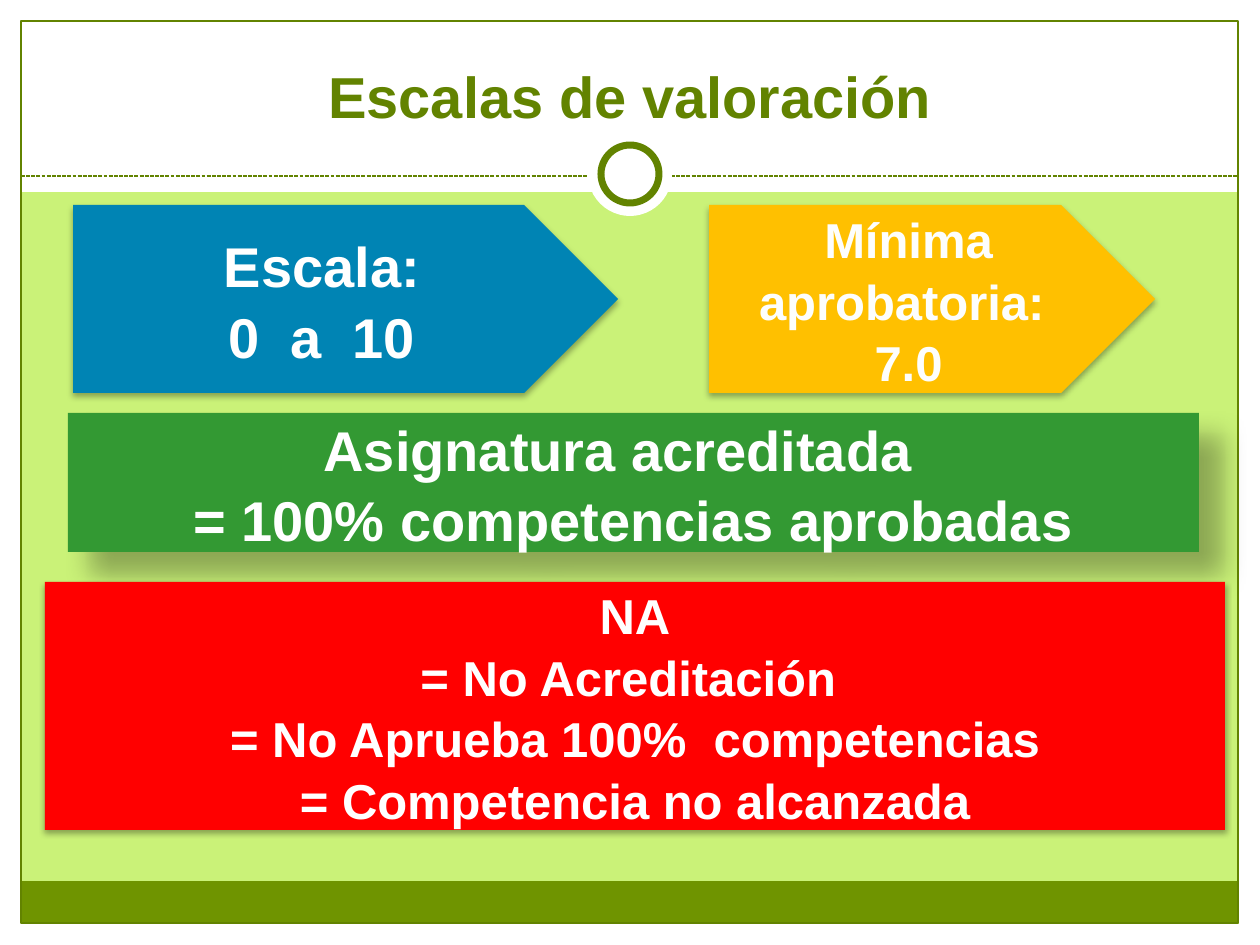
from dataclasses import dataclass
from typing import Optional

from lxml.etree import SubElement
from pptx import Presentation
from pptx.dml.color import RGBColor
from pptx.enum.dml import MSO_LINE
from pptx.enum.shapes import MSO_CONNECTOR, MSO_SHAPE
from pptx.enum.text import MSO_ANCHOR, MSO_AUTO_SIZE, PP_ALIGN
from pptx.oxml.ns import qn
from pptx.util import Emu, Pt

SCALE = 914400 / 126
WIDE, HIGH = 1260, 945


@dataclass(frozen=True)
class Theme:
    font: str = "Arial"
    back: str = "CAF278"
    white: str = "FFFFFF"
    pale: str = "FDFEFC"
    olive: str = "628300"
    band: str = "6F9400"
    blue: str = "0084B4"
    gold: str = "FFC000"
    green: str = "339933"
    red: str = "FF0000"
    black: str = "000000"
    head: int = 33
    large: int = 32
    small: int = 28
    thin: float = 0.75
    ring: int = 4
    lead: float = 1.05


@dataclass(frozen=True)
class Shade:
    alpha: int
    blur: float
    dist: float
    angle: int


@dataclass(frozen=True)
class Box:
    x: int
    y: int
    w: int
    h: int
    fill: Optional[str] = None
    kind: MSO_SHAPE = MSO_SHAPE.RECTANGLE
    line: Optional[str] = None
    weight: float = 0
    shade: Optional[Shade] = None


@dataclass(frozen=True)
class Card:
    box: Box
    lines: tuple[str, ...]
    size: int
    color: str


THEME = Theme()
SOFT = Shade(32, 3.5, 2.2, 90)
DEEP = Shade(30, 15, 18, 45)
ARROW = MSO_SHAPE.PENTAGON
OVAL = MSO_SHAPE.OVAL

FRAME = (
    Box(0, 924, WIDE, 21, THEME.white),
    Box(0, 0, WIDE, 192, THEME.white),
    Box(0, 0, 21, HIGH, THEME.white),
    Box(1239, 0, 21, HIGH, THEME.white),
    Box(21, 881, 1217, 43, THEME.band),
    Box(21, 21, 1217, 902, line=THEME.olive, weight=THEME.thin),
)
RINGS = (
    Box(588, 132, 84, 84, THEME.white, OVAL),
    Box(601, 145, 58, 58, THEME.white, OVAL, THEME.olive, THEME.ring),
)
CARDS = (
    Card(Box(73, 205, 545, 188, THEME.blue, ARROW, shade=SOFT),
         ("Escala:", "0  a  10"), THEME.large, THEME.white),
    Card(Box(68, 413, 1131, 139, THEME.green, shade=DEEP),
         ("Asignatura acreditada  ", "= 100% competencias aprobadas"),
         THEME.large, THEME.white),
    Card(Box(45, 582, 1180, 248, THEME.red, shade=SOFT),
         ("NA", "= No Acreditación ", "= No Aprueba 100%  competencias",
          "= Competencia no alcanzada"), THEME.small, THEME.white),
    Card(Box(709, 205, 446, 188, THEME.gold, ARROW, shade=SOFT),
         ("Mínima aprobatoria: ", "7.0"), THEME.small, THEME.pale),
)


def px(n: int) -> Emu:
    """Turn pixels into EMU."""
    return Emu(round(n * SCALE))


def rgb(code: str) -> RGBColor:
    """Turn a hex code into a colour."""
    return RGBColor.from_string(code)


def cast(shape, shade: Shade) -> None:
    """Give a shape an outer shadow."""
    effect = shape._element.spPr.find(qn("a:effectLst"))
    outer = SubElement(effect, qn("a:outerShdw"), blurRad=str(Pt(shade.blur)),
                       dist=str(Pt(shade.dist)), dir=str(shade.angle * 60000),
                       algn="tl", rotWithShape="0")
    color = SubElement(outer, qn("a:srgbClr"), val=THEME.black)
    SubElement(color, qn("a:alpha"), val=str(shade.alpha * 1000))


def draw(slide, box: Box):
    """Draw one preset shape."""
    shape = slide.shapes.add_shape(
        box.kind, px(box.x), px(box.y), px(box.w), px(box.h))
    shape.shadow.inherit = False
    if box.fill:
        shape.fill.solid()
        shape.fill.fore_color.rgb = rgb(box.fill)
    else:
        shape.fill.background()
    if box.line:
        shape.line.color.rgb = rgb(box.line)
        shape.line.width = Pt(box.weight)
    else:
        shape.line.fill.background()
    if box.shade:
        cast(shape, box.shade)
    return shape


def write(shape, *lines: str, size: int, color: str,
          anchor: MSO_ANCHOR = MSO_ANCHOR.MIDDLE, lead: float = 1.0) -> None:
    """Fill a shape with bold centred lines."""
    frame = shape.text_frame
    frame.word_wrap = True
    frame.auto_size = MSO_AUTO_SIZE.NONE
    frame.vertical_anchor = anchor
    frame.text = "\n".join(lines)
    for para in frame.paragraphs:
        para.alignment = PP_ALIGN.CENTER
        para.line_spacing = lead
        for run in para.runs:
            font = run.font
            font.name, font.size, font.bold = THEME.font, Pt(size), True
            font.color.rgb = rgb(color)


def rule(slide, x: int, y: int, end: int) -> None:
    """Draw the dashed rule below the title."""
    line = slide.shapes.add_connector(
        MSO_CONNECTOR.STRAIGHT, px(x), px(y), px(end), px(y))
    line.line.color.rgb = rgb(THEME.olive)
    line.line.width = Pt(THEME.thin)
    line.line.dash_style = MSO_LINE.SQUARE_DOT
    SubElement(line._element.spPr, qn("a:effectLst"))


def main() -> None:
    """Build and save the slide."""
    deck = Presentation()
    deck.slide_width, deck.slide_height = px(WIDE), px(HIGH)
    slide = deck.slides.add_slide(deck.slide_layouts[5])
    slide.background.fill.solid()
    slide.background.fill.fore_color.rgb = rgb(THEME.back)
    for box in FRAME:
        draw(slide, box)
    rule(slide, 21, 176, 1239)
    for box in RINGS:
        draw(slide, box)
    title = slide.shapes.title
    title.left, title.top = px(42), px(32)
    title.width, title.height = px(1176), px(104)
    slide.shapes._spTree.append(title._element)
    write(title, "Escalas de valoración", size=THEME.head, color=THEME.olive,
          anchor=MSO_ANCHOR.BOTTOM)
    for card in CARDS:
        write(draw(slide, card.box), *card.lines, size=card.size,
              color=card.color, lead=THEME.lead)
    deck.save("out.pptx")


if __name__ == "__main__":
    main()
